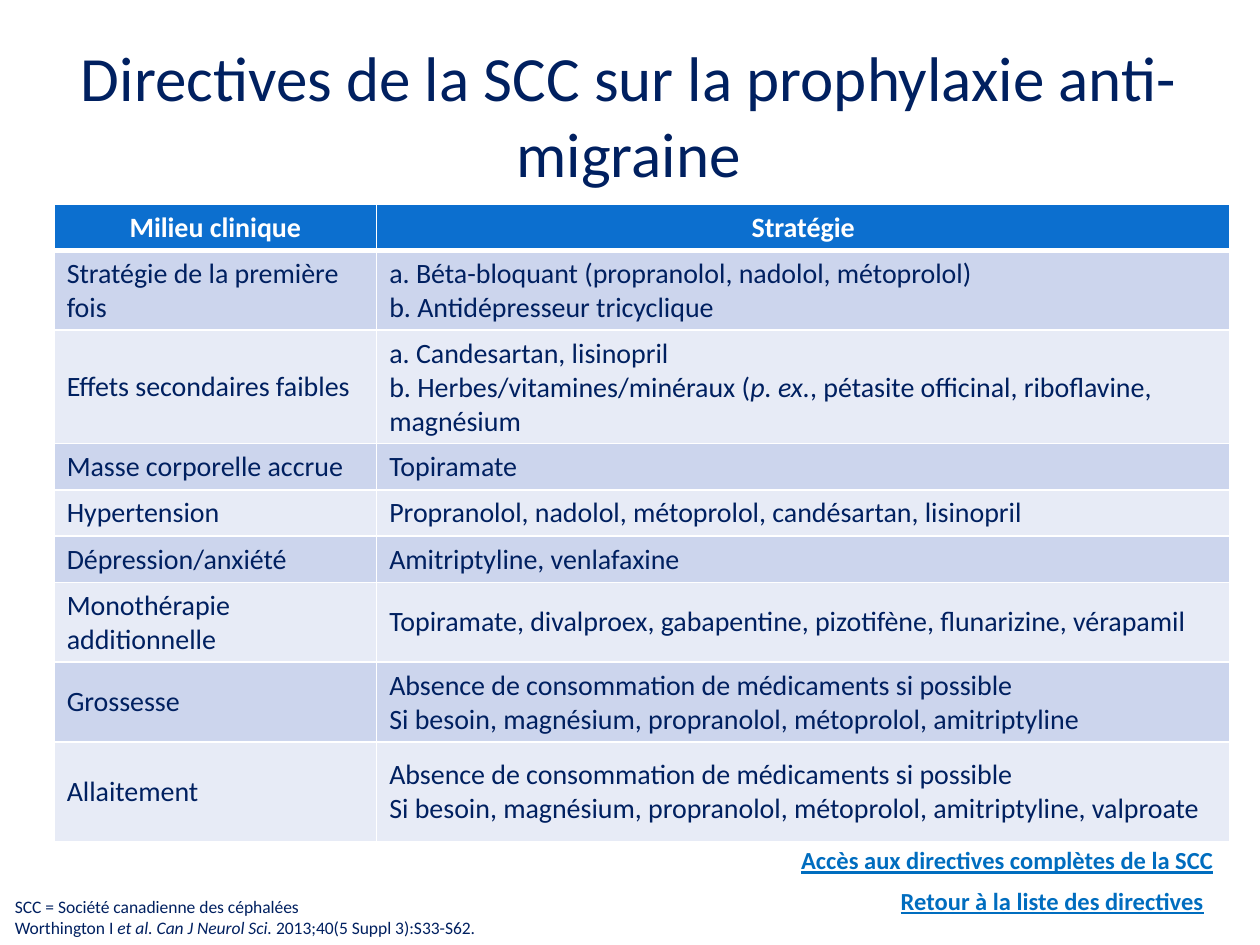
from lxml import etree
from pptx import Presentation
from pptx.dml.color import RGBColor
from pptx.enum import text
from pptx.oxml import ns
from pptx.util import Inches, Pt

NAVY = RGBColor(0x00, 0x20, 0x60)
LINK = RGBColor(0x00, 0x6D, 0xBF)
WHITE = RGBColor(0xFF, 0xFF, 0xFF)
HEADER = RGBColor(0x0C, 0x6F, 0xCF)
BANDS = [RGBColor(0xE7, 0xEB, 0xF6), RGBColor(0xCC, 0xD5, 0xED)]
FONT = "Calibri"

TITLE = "Directives de la SCC sur la prophylaxie anti-migraine"
FOOTNOTE = [
    "SCC = Société canadienne des céphalées",
    "Worthington I *et al. Can J Neurol Sci. *2013;40(5 Suppl 3):S33-S62.",
]
LINKS = [
    ("Retour à la liste des directives", (7.05, 6.98, 2.62, 0.34)),
    ("Accès aux directives complètes de la SCC", (6.26, 6.66, 3.49, 0.34)),
]
NO_DRUGS = "Absence de consommation de médicaments si possible"
IF_NEEDED = "Si besoin, magnésium, propranolol, métoprolol, amitriptyline"
ROWS = [
    (0.35, "Milieu clinique", ["Stratégie"]),
    (0.55, "Stratégie de la première fois",
     ["a. Béta-bloquant (propranolol, nadolol, métoprolol)",
      "b. Antidépresseur tricyclique"]),
    (0.79, "Effets secondaires faibles",
     ["a. Candesartan, lisinopril",
      "b. Herbes/vitamines/minéraux (*p. ex.*, pétasite officinal, riboflavine, magnésium"]),
    (0.35, "Masse corporelle accrue", ["Topiramate"]),
    (0.35, "Hypertension", ["Propranolol, nadolol, métoprolol, candésartan, lisinopril"]),
    (0.35, "Dépression/anxiété", ["Amitriptyline, venlafaxine"]),
    (0.55, "Monothérapie additionnelle",
     ["Topiramate, divalproex, gabapentine, pizotifène, flunarizine, vérapamil"]),
    (0.55, "Grossesse", [NO_DRUGS, IF_NEEDED]),
    (0.79, "Allaitement", [NO_DRUGS, IF_NEEDED + ", valproate"]),
]
COLUMNS = [2.56, 6.77]


def write(tf, lines, size, color, bold=False, underline=False, align=None):
    for i, line in enumerate(lines):
        p = tf.paragraphs[0] if i == 0 else tf.add_paragraph()
        p.alignment = align
        for j, part in enumerate(line.split("*")):
            r = p.add_run()
            r.text = part
            r.font.name = FONT
            r.font.size = Pt(size)
            r.font.color.rgb = color
            r.font.bold = bold
            r.font.underline = underline
            r.font.italic = j % 2 == 1


def add_text(s, box, lines, size, color, wrap=True, anchor=text.MSO_ANCHOR.TOP, **style):
    tf = s.shapes.add_textbox(*map(Inches, box)).text_frame
    tf.word_wrap = wrap
    tf.vertical_anchor = anchor
    write(tf, lines, size, color, **style)


def set_borders(cell, top, bottom):
    tc_pr = cell._tc.get_or_add_tcPr()
    for side, width in (("L", 1), ("R", 1), ("T", top), ("B", bottom)):
        ln = etree.SubElement(tc_pr, ns.qn("a:ln" + side), w=str(Pt(width)))
        fill = etree.SubElement(ln, ns.qn("a:solidFill"))
        etree.SubElement(fill, ns.qn("a:srgbClr"), val=str(WHITE))


def add_strategy_table(s):
    height = sum(row[0] for row in ROWS)
    table = s.shapes.add_table(
        len(ROWS), len(COLUMNS), Inches(0.43), Inches(1.62),
        Inches(sum(COLUMNS)), Inches(height)).table
    for column, width in zip(table.columns, COLUMNS):
        column.width = Inches(width)
    for i, (row_height, setting, strategy) in enumerate(ROWS):
        table.rows[i].height = Inches(row_height)
        header = i == 0
        for j, lines in enumerate(([setting], strategy)):
            cell = table.cell(i, j)
            set_borders(cell, 3 if i == 1 else 1, 3 if header else 1)
            cell.fill.solid()
            cell.fill.fore_color.rgb = HEADER if header else BANDS[i % 2]
            cell.vertical_anchor = text.MSO_ANCHOR.MIDDLE
            write(cell.text_frame, lines, 16, WHITE if header else NAVY, bold=header,
                  align=text.PP_ALIGN.CENTER if header else None)


def main():
    prs = Presentation()
    prs.slide_width, prs.slide_height = Inches(10), Inches(7.5)
    s = prs.slides.add_slide(prs.slide_layouts[6])
    add_text(s, (0.02, 7.06, 6.61, 0.44), FOOTNOTE, 10, NAVY)
    add_text(s, (0.49, 0.28, 9, 1.25), [TITLE], 36, NAVY,
             anchor=text.MSO_ANCHOR.MIDDLE, align=text.PP_ALIGN.CENTER)
    add_strategy_table(s)
    for label, box in LINKS:
        add_text(s, box, [label], 14, LINK, wrap=False, bold=True, underline=True)
    prs.save("out.pptx")


if __name__ == "__main__":
    main()
